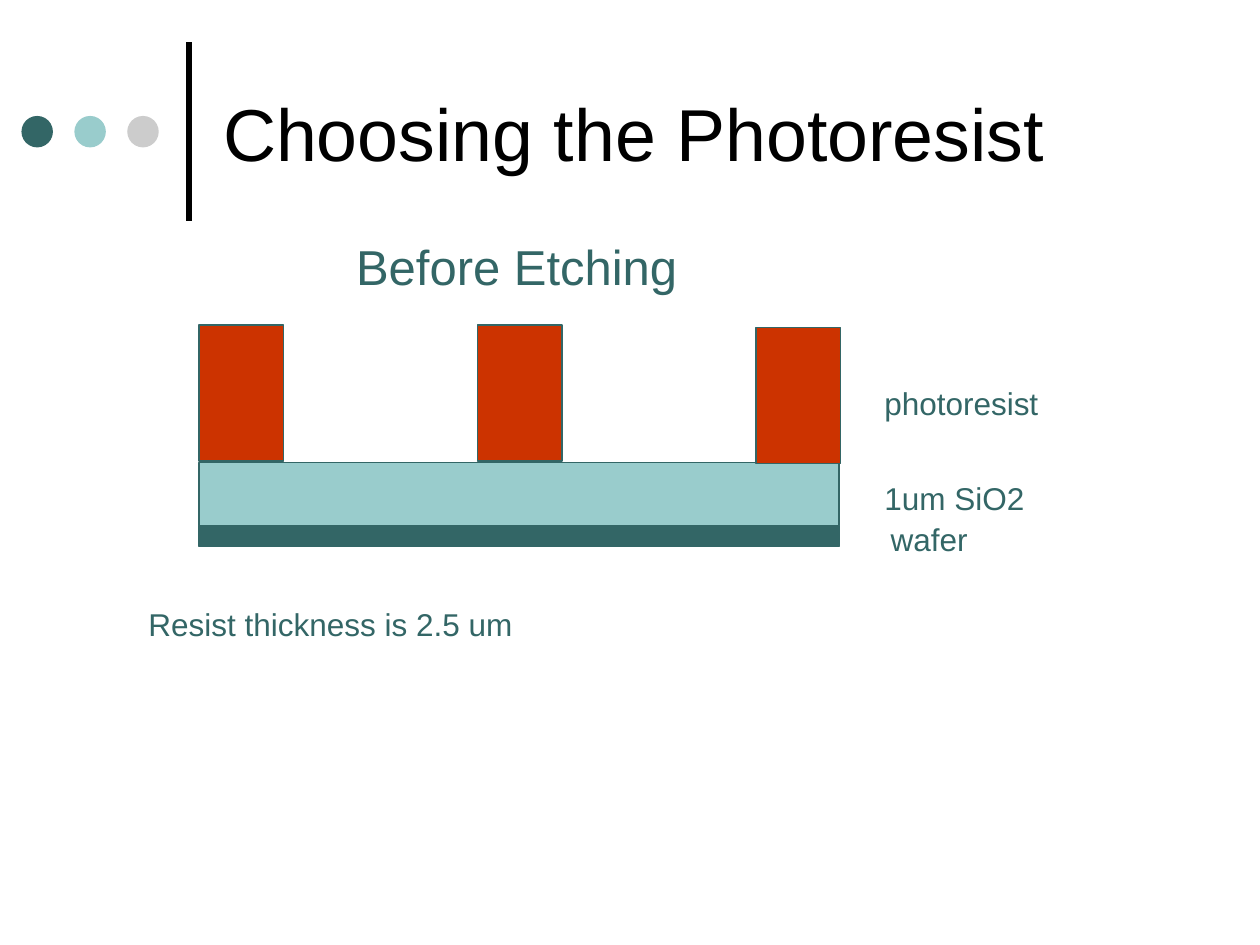
"""Build the slide on choosing the photoresist."""
from lxml.etree import SubElement
from pptx import Presentation
from pptx.dml.color import RGBColor
from pptx.enum.shapes import MSO_CONNECTOR as Link, MSO_SHAPE as Kind
from pptx.enum.text import MSO_ANCHOR as Anchor, PP_ALIGN as Align
from pptx.oxml.ns import qn
from pptx.util import Inches, Pt

TEAL, AQUA, GREY, RED = "336666", "99CCCC", "CCCCCC", "CC3300"
hue = RGBColor.from_string


def draw(kind, box, fill, line=None):
    shape = slide.shapes.add_shape(kind, *map(Inches, box))
    shape.shadow.inherit = False
    shape.fill.solid()
    shape.fill.fore_color.rgb = hue(fill)
    if line:
        shape.line.color.rgb = hue(line)
        shape.line.width = Pt(0.75)
    else:
        shape.line.fill.background()


def write(frame, text, size, color, align=Align.LEFT):
    frame.word_wrap = True
    frame.text = text
    para = frame.paragraphs[0]
    para.alignment = align
    font = para.runs[0].font
    look = {"name": "Arial", "size": Pt(size), "bold": False}
    for key, val in look.items():
        setattr(font, key, val)
    font.color.rgb = hue(color)


deck = Presentation()
deck.slide_width, deck.slide_height = Inches(10), Inches(7.5)
slide = deck.slides.add_slide(deck.slide_layouts[5])

title = slide.shapes.title
place = {"left": 1.67, "top": 0.21, "width": 7.67, "height": 1.67}
for key, val in place.items():
    setattr(title, key, Inches(val))
write(title.text_frame, "Choosing the Photoresist", 42, "000000")
title.text_frame.vertical_anchor = Anchor.MIDDLE

ends = map(Inches, (1.5, 1.75, 1.5, 0.33))
rule = slide.shapes.add_connector(Link.STRAIGHT, *ends)
rule.line.color.rgb = hue("000000")
rule.line.width = Pt(3)
SubElement(rule._element.spPr, qn("a:effectLst"))

for i, color in enumerate((TEAL, AQUA, GREY)):
    draw(Kind.OVAL, (0.17 + 0.42 * i, 0.92, 0.25, 0.25), color)

draw(Kind.RECTANGLE, (1.58, 3.67, 5.08, 0.5), AQUA, TEAL)
draw(Kind.RECTANGLE, (1.58, 4.17, 5.08, 0.17), TEAL, TEAL)
for i, top in enumerate((2.58, 2.58, 2.6)):
    draw(Kind.RECTANGLE, (1.58 + 2.21 * i, top, 0.67, 1.08), RED, TEAL)

notes = [
    ("Before Etching", 2.71, 1.83, 2.78, 0.57, 28, Align.CENTER),
    ("photoresist", 6.92, 3, 1.67, 0.4, 18, Align.LEFT),
    ("1um SiO2", 6.92, 3.75, 1.42, 0.4, 18, Align.LEFT),
    ("wafer", 6.97, 4.08, 1.25, 0.4, 18, Align.LEFT),
    ("Resist thickness is 2.5 um", 1.08, 4.75, 6.33, 0.4, 18, Align.LEFT),
]
for text, *box, size, align in notes:
    label = slide.shapes.add_textbox(*map(Inches, box))
    write(label.text_frame, text, size, TEAL, align)

deck.save("out.pptx")
